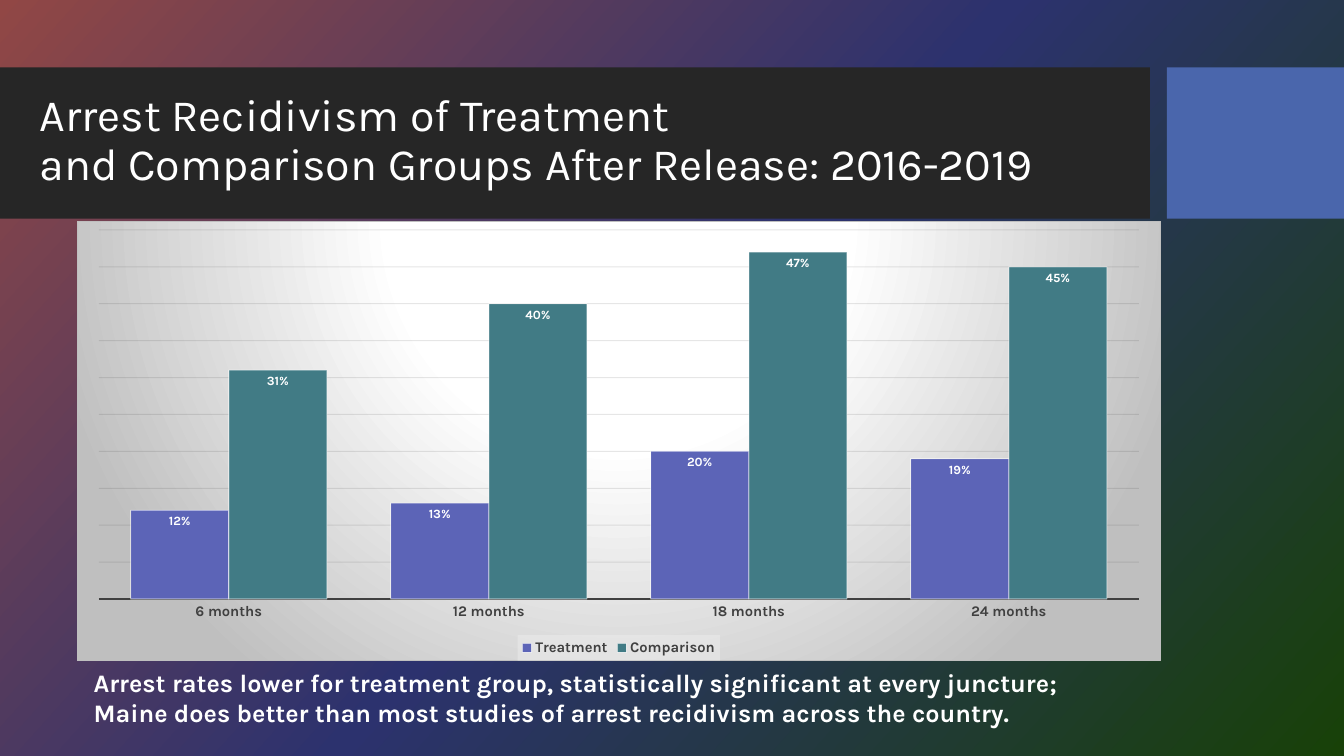
import lxml.etree
import pptx
import pptx.chart.data
import pptx.dml.color
import pptx.enum.chart
import pptx.enum.shapes
import pptx.enum.text
import pptx.oxml
import pptx.oxml.ns
import pptx.util
from dataclasses import dataclass
from pptx.util import Cm

# Content
TITLE = "Arrest Recidivism of Treatment\vand Comparison Groups After Release: 2016-2019"
NOTES = [
    "Arrest rates lower for treatment group, statistically significant at every juncture;",
    "Maine does better than most studies of arrest recidivism across the country.",
]
MONTHS = ["6 months", "12 months", "18 months", "24 months"]
RATES = {
    "Treatment": [0.12, 0.13, 0.20, 0.19],
    "Comparison": [0.31, 0.40, 0.47, 0.45],
}


@dataclass(frozen=True)
class Theme:
    font: str = "Karla"
    white: str = "FFFFFF"
    band: str = "262626"
    accent: str = "4A66AC"
    axis: str = "404040"
    grid: str = "0D0D0D"
    edge: str = "BFBFBF"
    legend: str = "F2F2F2"
    series: tuple = ("5C64B7", "417B85")
    backdrop: tuple = ((0, "914745"), (50, "2C326E"), (100, "184108"))
    glow: tuple = ((0, "FFFFFF"), (39, "FFFFFF"), (100, "BFBFBF"))
    title_size: float = 32
    note_size: float = 18
    axis_size: float = 10.5
    label_size: float = 9


THEME = Theme()
NAMESPACES = pptx.oxml.ns.nsdecls("a", "c")


def rgb(color):
    return pptx.dml.color.RGBColor.from_string(color)


def style_font(font, size, color, bold=True):
    font.name = THEME.font
    font.size = pptx.util.Pt(size)
    font.bold = bold
    font.color.rgb = rgb(color)


def style_line(line, color, width, opacity=100):
    line.color.rgb = rgb(color)
    line.width = pptx.util.Pt(width)
    if opacity < 100:
        tint = line.fill._xPr.find(".//" + pptx.oxml.ns.qn("a:srgbClr"))
        alpha = lxml.etree.SubElement(tint, pptx.oxml.ns.qn("a:alpha"))
        alpha.set("val", str(opacity * 1000))


def gradient(stops, direction):
    marks = "".join(
        f'<a:gs pos="{place * 1000}"><a:srgbClr val="{color}"/></a:gs>'
        for place, color in stops)
    return f'<a:gradFill {NAMESPACES} rotWithShape="1"><a:gsLst>{marks}</a:gsLst>{direction}</a:gradFill>'


def add_band(page, left, width, color):
    band = page.shapes.add_shape(
        pptx.enum.shapes.MSO_SHAPE.RECTANGLE, left, Cm(1.7), width, Cm(3.81))
    band.fill.solid()
    band.fill.fore_color.rgb = rgb(color)
    band.line.fill.background()
    band.shadow.inherit = False


def add_rates_chart(page):
    data = pptx.chart.data.CategoryChartData(number_format="0%")
    data.categories = MONTHS
    for name, rates in RATES.items():
        data.add_series(name, rates)
    chart = page.shapes.add_chart(
        pptx.enum.chart.XL_CHART_TYPE.COLUMN_CLUSTERED,
        Cm(1.93), Cm(5.56), Cm(27.33), Cm(11.1), data).chart
    chart.has_title = False
    style_font(chart.font, 10, THEME.white)

    # Columns and their labels
    plot = chart.plots[0]
    plot.gap_width = 65
    plot.overlap = 0
    plot.vary_by_categories = False
    for series, color in zip(plot.series, THEME.series):
        series.format.fill.solid()
        series.format.fill.fore_color.rgb = rgb(color)
        style_line(series.format.line, THEME.white, 0.75, 50)
        labels = series.data_labels
        labels.show_value = True
        labels.number_format = "0%"
        labels.number_format_is_linked = False
        labels.position = pptx.enum.chart.XL_LABEL_POSITION.INSIDE_END
        style_font(labels.font, THEME.label_size, THEME.white)

    # Axes
    months = chart.category_axis
    months.major_tick_mark = pptx.enum.chart.XL_TICK_MARK.NONE
    style_font(months.tick_labels.font, THEME.axis_size, THEME.axis)
    style_line(months.format.line, THEME.axis, 1.5)
    scale = chart.value_axis
    scale.minimum_scale, scale.maximum_scale, scale.major_unit = 0, 0.5, 0.05
    scale.has_major_gridlines = True
    style_line(scale.major_gridlines.format.line, THEME.grid, 0.75, 10)
    scale.visible = False

    # Legend
    chart.has_legend = True
    legend = chart.legend
    legend.position = pptx.enum.chart.XL_LEGEND_POSITION.BOTTOM
    legend.include_in_layout = False
    style_font(legend.font, THEME.axis_size, THEME.axis)
    legend._element.find(pptx.oxml.ns.qn("c:overlay")).addnext(pptx.oxml.parse_xml(
        f'<c:spPr {NAMESPACES}><a:solidFill><a:srgbClr val="{THEME.legend}">'
        '<a:alpha val="39000"/></a:srgbClr></a:solidFill></c:spPr>'))

    # Plot position, as shares of the chart frame
    area = chart._chartSpace.chart.plotArea
    for old in area.findall(pptx.oxml.ns.qn("c:layout")):
        area.remove(old)
    shares = "".join(f'<c:{key} val="{value}"/>' for key, value in (
        ("x", 0.02), ("y", 0.02), ("w", 0.96), ("h", 0.84)))
    area.insert(0, pptx.oxml.parse_xml(
        f'<c:layout {NAMESPACES}><c:manualLayout><c:layoutTarget val="inner"/>'
        f'<c:xMode val="edge"/><c:yMode val="edge"/>{shares}</c:manualLayout></c:layout>'))

    # Chart background
    glow = gradient(THEME.glow, '<a:path path="circle">'
                    '<a:fillToRect l="50000" t="-80000" r="50000" b="180000"/></a:path>')
    chart._chartSpace.chart.addnext(pptx.oxml.parse_xml(
        f'<c:spPr {NAMESPACES}>{glow}<a:ln w="9525"><a:solidFill>'
        f'<a:srgbClr val="{THEME.edge}"/></a:solidFill></a:ln></c:spPr>'))


def main():
    deck = pptx.Presentation()
    deck.slide_width, deck.slide_height = Cm(33.87), Cm(19.05)
    page = deck.slides.add_slide(deck.slide_layouts[5])

    # Backdrop
    page.background.fill.gradient()
    fill = page._element.find(".//" + pptx.oxml.ns.qn("a:gradFill"))
    fill.getparent().replace(fill, pptx.oxml.parse_xml(
        gradient(THEME.backdrop, f'<a:lin ang="{42 * 60000}" scaled="0"/>')))

    # Title on its bands
    add_band(page, 0, Cm(28.98), THEME.band)
    add_band(page, Cm(29.41), Cm(4.46), THEME.accent)
    title = page.shapes.title
    page.shapes._spTree.append(title._element)
    title.left, title.top, title.width, title.height = Cm(0.74), Cm(2.06), Cm(31.29), Cm(3)
    title.text_frame.text = TITLE
    title.text_frame.vertical_anchor = pptx.enum.text.MSO_ANCHOR.MIDDLE
    title.text_frame.auto_size = pptx.enum.text.MSO_AUTO_SIZE.NONE
    para = title.text_frame.paragraphs[0]
    para.alignment = pptx.enum.text.PP_ALIGN.LEFT
    para.line_spacing = 0.9
    for span in para.runs:
        style_font(span.font, THEME.title_size, THEME.white, bold=False)

    # Findings below the chart
    box = page.shapes.add_textbox(Cm(2.11), Cm(16.69), Cm(31.29), Cm(1.8))
    box.text_frame.word_wrap = True
    box.text_frame.auto_size = pptx.enum.text.MSO_AUTO_SIZE.SHAPE_TO_FIT_TEXT
    box.text_frame.text = "\n".join(NOTES)
    for para in box.text_frame.paragraphs:
        for span in para.runs:
            style_font(span.font, THEME.note_size, THEME.white)

    add_rates_chart(page)
    deck.save("out.pptx")


if __name__ == "__main__":
    main()
